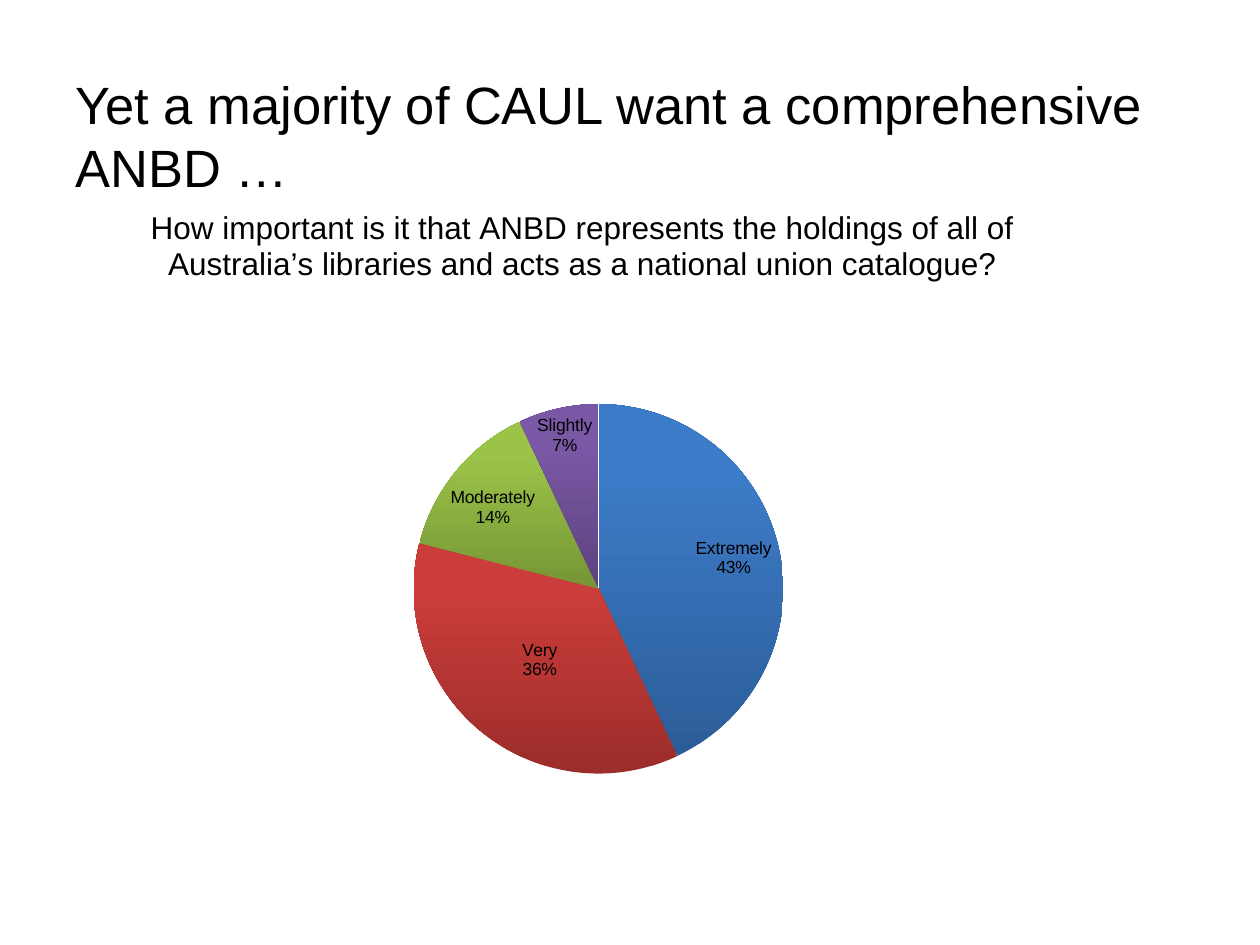
from lxml import etree
from pptx import Presentation
from pptx.chart.data import CategoryChartData
from pptx.dml.color import RGBColor
from pptx.enum.chart import XL_CHART_TYPE as ChartType, XL_LABEL_POSITION as LabelPos
from pptx.enum.text import MSO_ANCHOR, MSO_AUTO_SIZE, PP_ALIGN
from pptx.oxml.ns import qn
from pptx.util import Inches, Pt

BLACK = RGBColor(0x00, 0x00, 0x00)
BLUE = RGBColor(0x2C, 0x5D, 0x98), RGBColor(0x3C, 0x7B, 0xC7)
RED = RGBColor(0x9B, 0x2D, 0x2A), RGBColor(0xCB, 0x3D, 0x3A)
GREEN = RGBColor(0x76, 0x95, 0x35), RGBColor(0x9B, 0xC3, 0x48)
PURPLE = RGBColor(0x5D, 0x41, 0x7E), RGBColor(0x7B, 0x58, 0xA6)
AQUA = RGBColor(0x27, 0x87, 0xA0), RGBColor(0x36, 0xB1, 0xD2)

TITLE = "Yet a majority of CAUL want a comprehensive ANBD …"
QUESTION = ("How important is it that ANBD represents the holdings of all of "
            "Australia’s libraries and acts as a national union catalogue?")
ANSWERS = {
    "Extremely": (43, BLUE),
    "Very": (36, RED),
    "Moderately": (14, GREEN),
    "Slightly": (7, PURPLE),
    "Not": (0, AQUA),
}
LABEL_SHIFTS = {"Extremely": (0, -0.02), "Moderately": (-0.01, 0.02), "Slightly": (-0.02, 0)}


def apply(obj, **values):
    """Set each named attribute on an object."""
    for name, value in values.items():
        setattr(obj, name, value)


def set_font(font, size):
    """Give a font the slide's common look at one size."""
    apply(font, name="Arial", size=Pt(size), bold=False)
    font.color.rgb = BLACK


def add_title(s, text):
    """Fill and place the title placeholder."""
    sp = s.shapes.title
    apply(sp, left=Inches(0.5), top=Inches(0.52), width=Inches(9), height=Inches(0.87))
    tf = sp.text_frame
    tf.text = text
    apply(tf, word_wrap=True, auto_size=MSO_AUTO_SIZE.NONE, vertical_anchor=MSO_ANCHOR.TOP)
    p = tf.paragraphs[0]
    apply(p, alignment=PP_ALIGN.LEFT, line_spacing=1.0)
    set_font(p.runs[0].font, 30)


def set_layout(parent, index, **places):
    """Give a chart part a manual layout in shares of the chart."""
    for old in parent.findall(qn("c:layout")):
        parent.remove(old)
    layout = etree.Element(qn("c:layout"))
    manual = etree.SubElement(layout, qn("c:manualLayout"))
    for name, value in places.items():
        etree.SubElement(manual, qn(f"c:{name}"), val=str(value))
    parent.insert(index, layout)


def shade(fill, colors):
    """Fill from a dark bottom to a light top."""
    fill.gradient()
    fill.gradient_angle = 90
    for stop, color, position in zip(fill.gradient_stops, colors, (0, 0.8)):
        stop.color.rgb = color
        stop.position = position


def add_separator(labels):
    """Put the category and the percentage on separate lines."""
    separator = etree.Element(qn("c:separator"))
    separator.text = "\n"
    labels.find(qn("c:showBubbleSize")).addnext(separator)


def label_slices(series):
    """Label each slice with its answer and percentage, hiding the empty one."""
    labels = series.data_labels
    apply(labels, show_value=False, show_category_name=True, show_percentage=True,
          number_format="0%", number_format_is_linked=False, position=LabelPos.INSIDE_END)
    set_font(labels.font, 10)
    dLbls = series._element.find(qn("c:dLbls"))
    add_separator(dLbls)
    for i, name in enumerate(ANSWERS):
        inside = name in LABEL_SHIFTS
        series.points[i].data_label.position = LabelPos.INSIDE_END if inside else LabelPos.CENTER
    for name, label in zip(ANSWERS, dLbls.findall(qn("c:dLbl"))):
        if name == "Not":
            for child in list(label)[1:]:
                label.remove(child)
            etree.SubElement(label, qn("c:delete"), val="1")
            continue
        for flag, shown in {"showVal": 0, "showCatName": 1, "showPercent": 1}.items():
            label.find(qn(f"c:{flag}")).set("val", str(shown))
        add_separator(label)
        if name in LABEL_SHIFTS:
            x, y = LABEL_SHIFTS[name]
            set_layout(label, 1, x=x, y=y)


def add_pie(s):
    """Add the pie of answers under its question."""
    data = CategoryChartData()
    data.categories = list(ANSWERS)
    data.add_series("Series 1", [value for value, _ in ANSWERS.values()])
    chart = s.shapes.add_chart(ChartType.PIE, Inches(0.43), Inches(1.6),
                               Inches(9), Inches(4.73), data).chart
    chart.has_legend = False
    set_font(chart.font, 10)
    tf = chart.chart_title.text_frame
    tf.text = QUESTION
    set_font(tf.paragraphs[0].runs[0].font, 18)
    plot = chart.plots[0]
    plot.vary_by_categories = True
    series = plot.series[0]
    for i, (_, colors) in enumerate(ANSWERS.values()):
        shade(series.points[i].format.fill, colors)
    label_slices(series)
    area = chart._chartSpace.find(".//" + qn("c:plotArea"))
    set_layout(area, 0, layoutTarget="inner", xMode="edge", yMode="edge",
               x=0.28, y=0.34, w=0.4, h=0.62)
    title = chart._chartSpace.find(".//" + qn("c:title"))
    set_layout(title, 1, xMode="edge", yMode="edge", x=0.08, y=0)


def main():
    """Build and save the slide."""
    prs = Presentation()
    apply(prs, slide_width=Inches(10), slide_height=Inches(7.5))
    s = prs.slides.add_slide(prs.slide_layouts[5])
    add_title(s, TITLE)
    add_pie(s)
    prs.save("out.pptx")


if __name__ == "__main__":
    main()
